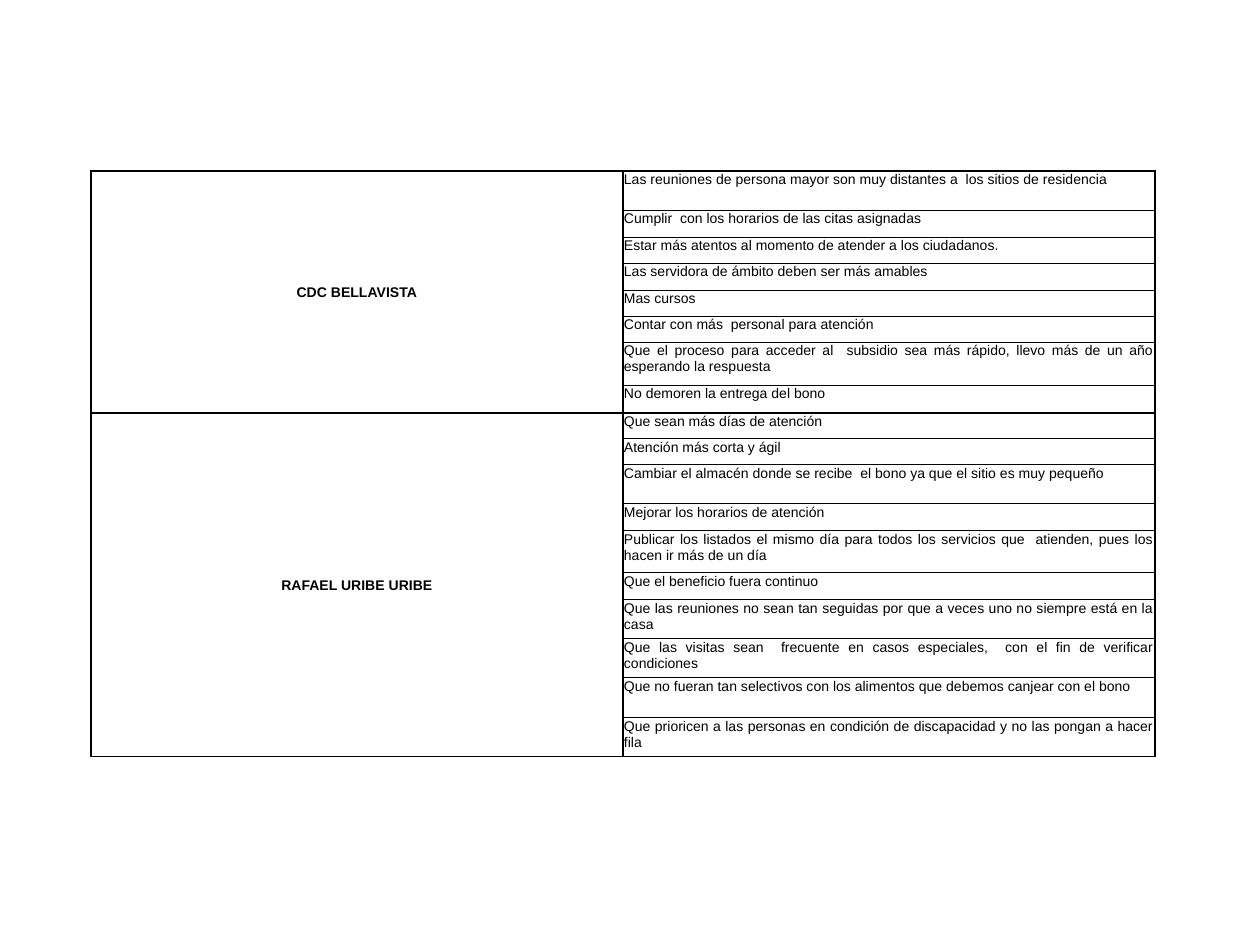
from lxml import etree
from pptx import Presentation
from pptx import util as u
from pptx.dml.color import RGBColor
from pptx.enum import text
from pptx.oxml.ns import qn

EMU_PER_PX = 914400 / 126
BLACK = RGBColor(0, 0, 0)
THIN, THICK = 0.5, 1
TABLE_LEFT, TABLE_TOP, COLUMN_WIDTH = 91, 171, 532

# Each centre with its suggestions and their row heights in px
CENTRES = [
    ("CDC BELLAVISTA", [
        ("Las reuniones de persona mayor son muy distantes a  los sitios de residencia", 39),
        ("Cumplir  con los horarios de las citas asignadas", 27),
        ("Estar más atentos al momento de atender a los ciudadanos.", 26),
        ("Las servidora de ámbito deben ser más amables", 27),
        ("Mas cursos", 26),
        ("Contar con más  personal para atención", 26),
        ("Que el proceso para acceder al  subsidio sea más rápido, llevo más de un año "
         "esperando la respuesta", 43),
        ("No demoren la entrega del bono", 28),
    ]),
    ("RAFAEL URIBE URIBE", [
        ("Que sean más días de atención", 26),
        ("Atención más corta y ágil", 26),
        ("Cambiar el almacén donde se recibe  el bono ya que el sitio es muy pequeño", 39),
        ("Mejorar los horarios de atención", 27),
        ("Publicar los listados el mismo día para todos los servicios que  atienden, pues los "
         "hacen ir más de un día", 42),
        ("Que el beneficio fuera continuo", 27),
        ("Que las reuniones no sean tan seguidas por que a veces uno no siempre está en la "
         "casa", 39),
        ("Que las visitas sean  frecuente en casos especiales,  con el fin de verificar "
         "condiciones", 39),
        ("Que no fueran tan selectivos con los alimentos que debemos canjear con el bono", 40),
        ("Que prioricen a las personas en condición de discapacidad y no las pongan a hacer "
         "fila", 39),
    ]),
]


def px(length):
    return u.Emu(round(length * EMU_PER_PX))


def write(cell, wording, bold=False, align=text.PP_ALIGN.JUSTIFY,
          anchor=text.MSO_ANCHOR.TOP):
    cell.vertical_anchor = anchor
    paragraph = cell.text_frame.paragraphs[0]
    paragraph.alignment = align
    run = paragraph.add_run()
    run.text = wording
    run.font.name = "Arial"
    run.font.size = u.Pt(8)
    run.font.bold = bold
    run.font.color.rgb = BLACK


def frame(cell, top=THICK, bottom=THICK):
    """Draw the four borders, then clear the fill, which must follow them."""
    properties = cell._tc.get_or_add_tcPr()
    for side, width in (("L", THICK), ("R", THICK), ("T", top), ("B", bottom)):
        line = etree.SubElement(properties, qn(f"a:ln{side}"), w=str(u.Pt(width)))
        fill = etree.SubElement(line, qn("a:solidFill"))
        etree.SubElement(fill, qn("a:srgbClr"), val=str(BLACK))
    cell.fill.background()


def set_margins(cell):
    cell.margin_left = cell.margin_right = cell.margin_top = px(1)
    cell.margin_bottom = 0


def add_suggestions_table(slide):
    heights = [height for _, suggestions in CENTRES for _, height in suggestions]
    table = slide.shapes.add_table(
        len(heights), 2, px(TABLE_LEFT), px(TABLE_TOP),
        px(2 * COLUMN_WIDTH), px(sum(heights))).table
    table.first_row = table.horz_banding = False
    for row, height in zip(table.rows, heights):
        row.height = px(height)
    for cell in table.iter_cells():
        set_margins(cell)

    first = 0
    for centre, suggestions in CENTRES:
        last = first + len(suggestions) - 1
        # Centre name, spanning its suggestions
        name_cell = table.cell(first, 0)
        name_cell.merge(table.cell(last, 0))
        write(name_cell, centre, bold=True, align=text.PP_ALIGN.CENTER,
              anchor=text.MSO_ANCHOR.MIDDLE)
        # Suggestions, thin lines between them
        for index, (suggestion, _) in enumerate(suggestions, first):
            frame(table.cell(index, 0))
            suggestion_cell = table.cell(index, 1)
            write(suggestion_cell, suggestion)
            frame(suggestion_cell, top=THICK if index == first else THIN,
                  bottom=THICK if index == last else THIN)
        first = last + 1


def main():
    presentation = Presentation()
    presentation.slide_width, presentation.slide_height = px(1260), px(945)
    slide = presentation.slides.add_slide(presentation.slide_layouts[6])
    add_suggestions_table(slide)
    presentation.save("out.pptx")


if __name__ == "__main__":
    main()
